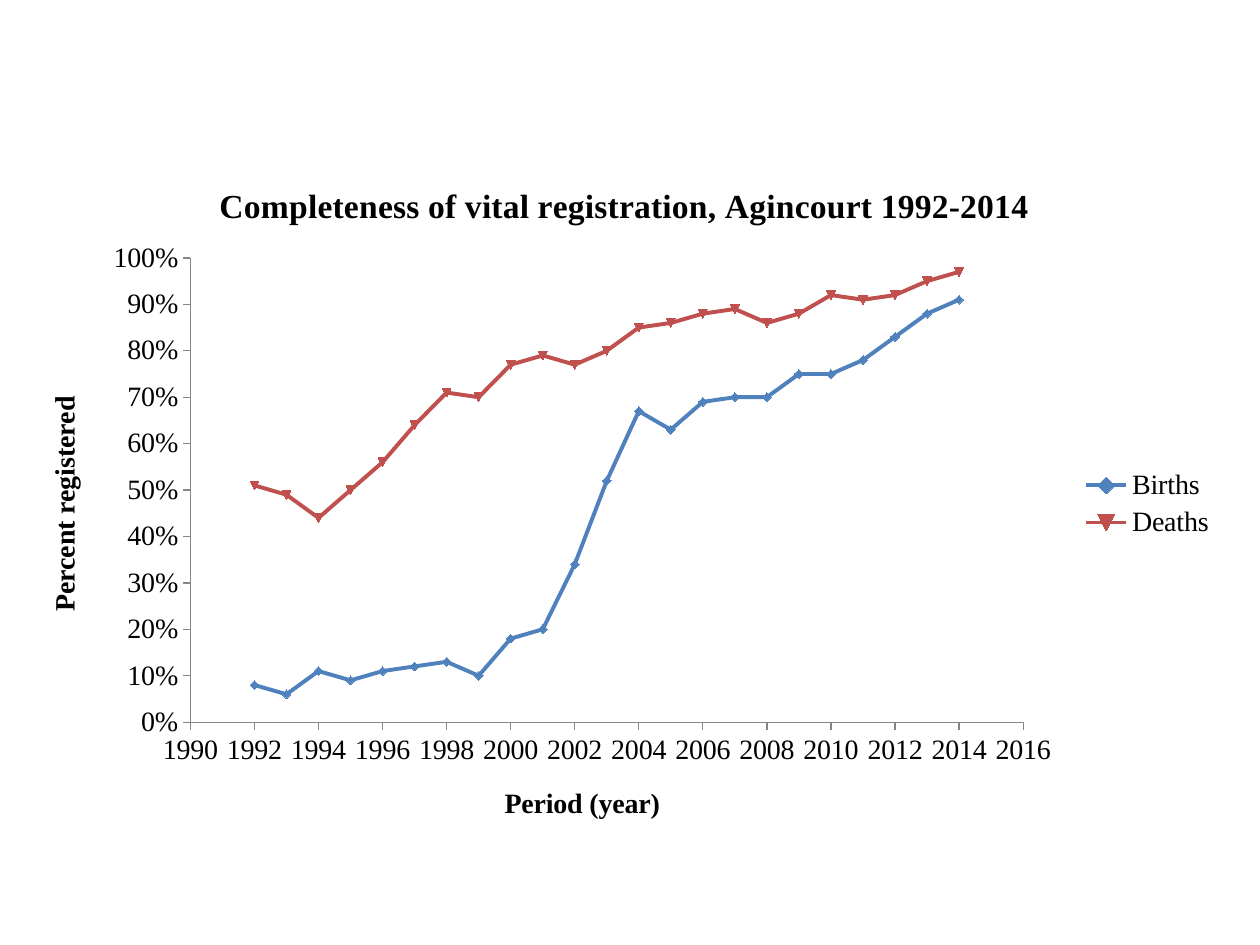
from lxml import etree
from pptx import Presentation
from pptx.chart.data import XyChartData
from pptx.dml.color import RGBColor
from pptx.enum.chart import XL_CHART_TYPE as ChartType, XL_LEGEND_POSITION as LegendPosition
from pptx.enum.chart import XL_TICK_MARK as TickMark
from pptx.oxml.ns import qn
from pptx.util import Pt


def color(hex_string):
    return RGBColor.from_string(hex_string)


def set_title(owner, text, size):
    owner.has_title = True
    title = owner.chart_title if hasattr(owner, "chart_title") else owner.axis_title
    para = title.text_frame.paragraphs[0]
    para.text = text
    font = para.font
    font.name, font.size, font.bold = "Times New Roman", Pt(size), True
    font.color.rgb = color("000000")


deck = Presentation()
deck.slide_width, deck.slide_height = Pt(720), Pt(540)
page = deck.slides.add_slide(deck.slide_layouts[6])

# Share registered per year, from 1992
first_year = 1992
registered = {
    "Births": [0.08, 0.06, 0.11, 0.09, 0.11, 0.12, 0.13, 0.10, 0.18, 0.20, 0.34, 0.52,
               0.67, 0.63, 0.69, 0.70, 0.70, 0.75, 0.75, 0.78, 0.83, 0.88, 0.91],
    "Deaths": [0.51, 0.49, 0.44, 0.50, 0.56, 0.64, 0.71, 0.70, 0.77, 0.79, 0.77, 0.80,
               0.85, 0.86, 0.88, 0.89, 0.86, 0.88, 0.92, 0.91, 0.92, 0.95, 0.97],
}
data = XyChartData(number_format="0%")
for name, shares in registered.items():
    series = data.add_series(name)
    for year, share in enumerate(shares, first_year):
        series.add_data_point(year, share)

# Chart
chart = page.shapes.add_chart(ChartType.XY_SCATTER_LINES, Pt(12.24), Pt(90),
                              Pt(689.76), Pt(396), data).chart
chart.font.name, chart.font.size = "Times New Roman", Pt(16)
chart.font.color.rgb = color("000000")
set_title(chart, "Completeness of vital registration, Agincourt 1992-2014", 19.2)
chart.has_legend = True
chart.legend.position = LegendPosition.RIGHT
chart.legend.include_in_layout = False

# Lines and markers
plot = chart.plots[0]
plot.vary_by_categories = False
for series, line_color in zip(plot.series, ("4F81BD", "C0504D")):
    series.smooth = False
    series.format.line.width = Pt(2.25)
    series.format.line.color.rgb = color(line_color)
    series.marker.size = 5
    series.marker.format.fill.solid()
    series.marker.format.fill.fore_color.rgb = color(line_color)
    series.marker.format.line.color.rgb = color(line_color)

# Axes
for axis, text, low, high, step, number_format in (
        (chart.category_axis, "Period (year)", 1990, 2016, 2, "General"),
        (chart.value_axis, "Percent registered", 0, 1, 0.1, "0%")):
    set_title(axis, text, 16)
    axis.minimum_scale, axis.maximum_scale, axis.major_unit = low, high, step
    axis.has_major_gridlines = False
    axis.major_tick_mark, axis.minor_tick_mark = TickMark.OUTSIDE, TickMark.NONE
    axis.tick_labels.number_format = number_format
    axis.tick_labels.number_format_is_linked = False
    axis.format.line.width = Pt(0.75)
    axis.format.line.color.rgb = color("868686")

# Fixed plot area, as shares of the chart
plot_area = chart.element.find(".//" + qn("c:plotArea"))
layout = plot_area.find(qn("c:layout"))
if layout is None:
    layout = etree.Element(qn("c:layout"))
    plot_area.insert(0, layout)
manual = etree.SubElement(layout, qn("c:manualLayout"))
for tag, setting in (("layoutTarget", "inner"), ("xMode", "edge"), ("yMode", "edge"),
                     ("x", "0.14"), ("y", "0.145"), ("w", "0.69"), ("h", "0.67")):
    etree.SubElement(manual, qn("c:" + tag)).set("val", setting)

deck.save("out.pptx")
